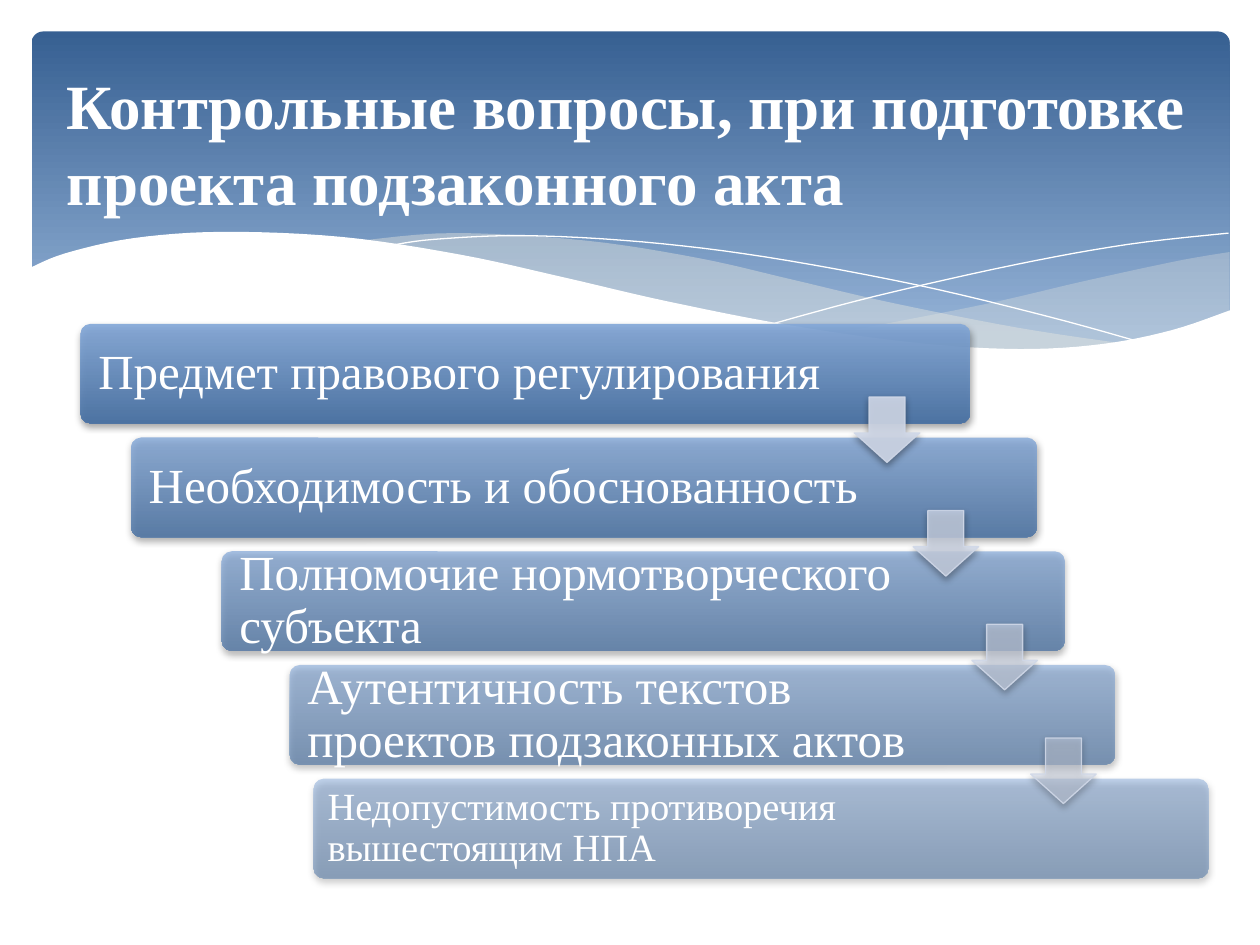
from lxml import etree
from pptx import Presentation
from pptx.dml.color import RGBColor
from pptx.enum.shapes import MSO_SHAPE
from pptx.enum.text import MSO_ANCHOR, PP_ALIGN
from pptx.oxml.ns import qn
from pptx.util import Inches, Pt

ROUNDED, ARROW = MSO_SHAPE.ROUNDED_RECTANGLE, MSO_SHAPE.DOWN_ARROW
TOP, MIDDLE, LEFT = MSO_ANCHOR.TOP, MSO_ANCHOR.MIDDLE, PP_ALIGN.LEFT
FONT, WHITE, CREAM, PALE = "Times New Roman", "FFFFFF", "EEECE1", "D0D8E8"

# Wave outlines, in inches on the slide
RIGHT_SWOOSH = (
    [(9.76, 2), (9.35, 2.07), (8.61, 2.23), (7.79, 2.42), (6.61, 2.65)],
    [(6.61, 2.65), (7.19, 2.72), (8.03, 2.78), (8.81, 2.73), (9.35, 2.62), (9.76, 2.47)],
)
MIDDLE_SWOOSH = (
    [(8.93, 2.73), (8.07, 2.6), (7.06, 2.4), (6.29, 2.22), (5.55, 2.05),
     (4.65, 1.91), (3.61, 1.85), (2.86, 1.91)],
    [(2.86, 1.91), (3.62, 2.03), (4.49, 2.22), (5.66, 2.48), (6.65, 2.66),
     (7.48, 2.76), (8.18, 2.78), (8.93, 2.73)],
)
FALLING_LINE = ([(3.09, 1.95), (3.44, 1.9), (4.16, 1.87), (5.1, 1.92), (6.08, 2.04),
                 (7.27, 2.26), (8.31, 2.51), (9.07, 2.72)],)
RISING_LINE = ([(6.13, 2.57), (6.95, 2.35), (8.06, 2.1), (8.95, 1.94), (9.75, 1.85)],)
WHITE_WAVE = (
    [(9.77, 2.46), (9.3, 2.62), (8.75, 2.73), (8.09, 2.77), (7.26, 2.72), (6.26, 2.58),
     (5.29, 2.39), (4.47, 2.2), (3.65, 2.02), (2.71, 1.88), (1.77, 1.84), (1.06, 1.89),
     (0.52, 2.01), (0.23, 2.13)],
    [(0.23, 3.29), (9.77, 3.29)],
)

# Question, left, bar width, text width, font size, inset
QUESTIONS = [
    ("Предмет правового регулирования", 0.64, 7.06, 5.99, 28, 0.12),
    ("Необходимость и обоснованность", 1.04, 7.19, 6.01, 28, 0.12),
    ("Полномочие нормотворческого субъекта", 1.76, 6.69, 5.59, 28, 0.12),
    ("Аутентичность текстов проектов подзаконных актов", 2.3, 6.55, 5.47, 28, 0.12),
    ("Недопустимость противоречия вышестоящим НПА", 2.49, 7.1, 5.94, 22, 0.09),
]


def color(value):
    return RGBColor.from_string(value)


def set_alpha(fill_parent, percent):
    for node in fill_parent.iter(qn("a:srgbClr")):
        etree.SubElement(node, qn("a:alpha")).set("val", str(round(percent * 1000)))


def solid(shape, value, alpha=100):
    shape.fill.solid()
    shape.fill.fore_color.rgb = color(value)
    if alpha < 100:
        set_alpha(shape.fill._xPr.find(qn("a:solidFill")), alpha)


def gradient(shape, first, last, end=1, alpha=100):
    shape.fill.gradient()
    shape.fill.gradient_angle = 270
    for stop, value, position in zip(shape.fill.gradient_stops, (first, last), (0, end)):
        stop.color.rgb = color(value)
        stop.position = position
    if alpha < 100:
        set_alpha(shape.fill._xPr.find(qn("a:gradFill")), alpha)


def add_shadow(shape):
    effects = shape._element.spPr.find(qn("a:effectLst"))
    shadow = etree.SubElement(effects, qn("a:outerShdw"), blurRad=str(Pt(4)),
                              dist=str(Pt(2)), dir="5400000", rotWithShape="0")
    etree.SubElement(shadow, qn("a:srgbClr"), val="000000")
    set_alpha(shadow, 38)


def add_preset(slide, kind, box, adjustments):
    shape = slide.shapes.add_shape(kind, *map(Inches, box))
    for index, value in enumerate(adjustments):
        shape.adjustments[index] = value
    shape.line.fill.background()
    shape.shadow.inherit = False
    return shape


def write(shape, text, size, bold=False, anchor=TOP, inset=(0.1, 0.05), spacing=None):
    frame = shape.text_frame
    frame.word_wrap = True
    frame.vertical_anchor = anchor
    frame.margin_left = frame.margin_right = Inches(inset[0])
    frame.margin_top = frame.margin_bottom = Inches(inset[1])
    paragraph = frame.paragraphs[0]
    paragraph.alignment = LEFT
    paragraph.line_spacing = spacing
    run = paragraph.add_run()
    run.text = text
    run.font.name, run.font.size, run.font.bold = FONT, Pt(size), bold
    run.font.color.rgb = color(WHITE)


def smooth_curve(knots, steps=6):
    """Points of a Catmull-Rom curve through the knots."""
    if len(knots) < 3:
        return knots
    padded = [knots[0], *knots, knots[-1]]
    points = [knots[0]]
    for a, b, c, d in zip(padded, padded[1:], padded[2:], padded[3:]):
        for step in range(1, steps + 1):
            t = step / steps
            points.append(tuple(
                (2 * q + (r - p) * t + (2 * p - 5 * q + 4 * r - s) * t ** 2
                 + (3 * q - p - 3 * r + s) * t ** 3) / 2
                for p, q, r, s in zip(a, b, c, d)))
    return points


def add_wave(slide, edges, fill=None, alpha=100):
    points = [(Inches(x), Inches(y)) for edge in edges for x, y in smooth_curve(edge)]
    builder = slide.shapes.build_freeform(*points[0])
    builder.add_line_segments(points[1:], close=fill is not None)
    wave = builder.convert_to_shape()
    wave.shadow.inherit = False
    if fill:
        solid(wave, fill, alpha)
        wave.line.fill.background()
    else:
        wave.fill.background()
        wave.line.color.rgb = color(WHITE)
        wave.line.width = Pt(0)


def add_banner(slide, box):
    banner = add_preset(slide, ROUNDED, box, [0.034])
    gradient(banner, "376092", "95B3D7", end=0.9)
    add_wave(slide, RIGHT_SWOOSH, CREAM, 29)
    add_wave(slide, MIDDLE_SWOOSH, CREAM, 40)
    add_wave(slide, FALLING_LINE)
    add_wave(slide, RISING_LINE)
    add_wave(slide, WHITE_WAVE, WHITE)


def add_title(slide, box, text):
    title = slide.shapes.title
    title.left, title.top, title.width, title.height = map(Inches, box)
    write(title, text, 36, bold=True)
    slide.shapes._spTree.append(title._element)  # in front of the banner


def add_staircase(slide, top, bottom, bar_height=0.79):
    pitch = (bottom - top - bar_height) / (len(QUESTIONS) - 1)
    # Bars with their questions
    for index, (question, left, width, text_width, size, inset) in enumerate(QUESTIONS):
        y = top + index * pitch
        bar = add_preset(slide, ROUNDED, (left, y, width, bar_height), [0.1])
        gradient(bar, "82A7D8", "446EA2", alpha=90 - 10 * index)
        add_shadow(bar)
        label = slide.shapes.add_textbox(
            *map(Inches, (left + 0.02, y + 0.02, text_width, bar_height - 0.04)))
        write(label, question, size, anchor=MIDDLE, inset=(inset, inset), spacing=0.9)
    # Arrows between neighbouring bars
    links = len(QUESTIONS) - 1
    for index in range(links):
        box = (6.78 + 1.4 * index / (links - 1), top + 0.58 + index * pitch, 0.52, 0.52)
        arrow = add_preset(slide, ARROW, box, [0.55, 0.45])
        solid(arrow, PALE, 90 - 40 * index / (links - 1))
        arrow.line.color.rgb = color(PALE)
        arrow.line.width = Pt(0.75)
        set_alpha(arrow._element.spPr.find(qn("a:ln")), 90)
        add_shadow(arrow)


def main():
    deck = Presentation()
    deck.slide_width, deck.slide_height = Inches(10), Inches(7.5)
    slide = deck.slides.add_slide(deck.slide_layouts[5])
    add_banner(slide, (0.25, 0.25, 9.51, 2.7))
    add_title(slide, (0.43, 0.48, 9.13, 1.31),
              "Контрольные вопросы, при подготовке проекта подзаконного акта")
    add_staircase(slide, top=2.57, bottom=6.97)
    deck.save("out.pptx")


if __name__ == "__main__":
    main()
